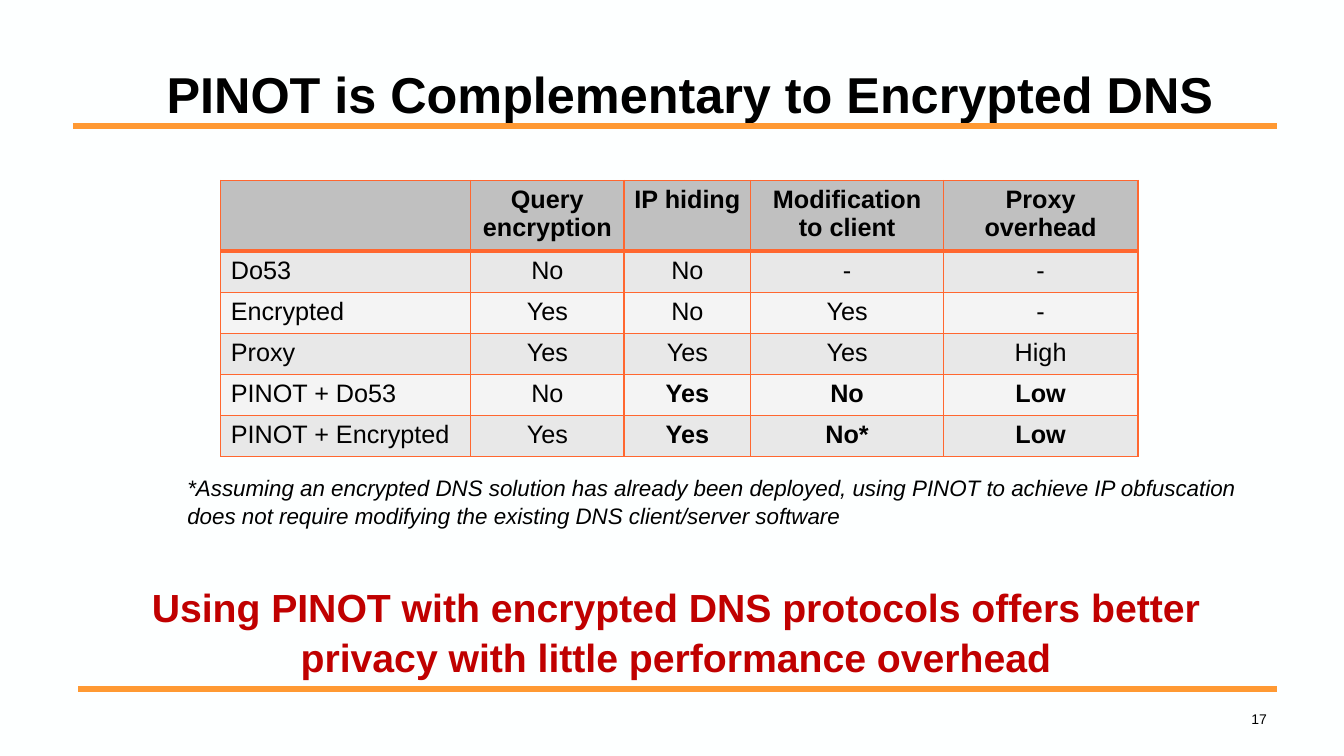
from lxml.etree import SubElement
from pptx import Presentation
from pptx.dml.color import RGBColor
from pptx.enum.shapes import MSO_CONNECTOR as Connector
from pptx.enum.text import MSO_ANCHOR as Anchor, MSO_AUTO_SIZE as AutoSize, PP_ALIGN as Align
from pptx.oxml.ns import qn
from pptx.util import Pt

COLORS = {
    "background": "FDFFFF", "text": "000000", "callout": "C00000",
    "rule": "FF9933", "border": "FF6730", "header": "C0C0C0",
    "odd row": "E8E8E8", "even row": "F4F4F4",
}


def color(name):
    return RGBColor.from_string(COLORS[name])


def write(frame, text, size=18, fill="text", bold=False, italic=False,
          align=Align.LEFT, spacing=1.0):
    frame.word_wrap = True
    paragraph = frame.paragraphs[0]
    paragraph.alignment = align
    paragraph.line_spacing = spacing
    run = paragraph.add_run()
    run.text = text
    run.font.name = "Arial"
    run.font.size = Pt(size)
    run.font.bold = bold
    run.font.italic = italic
    run.font.color.rgb = color(fill)


presentation = Presentation()
presentation.slide_width, presentation.slide_height = Pt(960), Pt(540)
slide = presentation.slides.add_slide(presentation.slide_layouts[5])
slide.background.fill.solid()
slide.background.fill.fore_color.rgb = color("background")

# Rules under the title and above the footer
for left, top in [(52, 90), (56, 492)]:
    rule = slide.shapes.add_connector(Connector.STRAIGHT, Pt(left), Pt(top), Pt(912), Pt(top))
    rule.line.color.rgb = color("rule")
    rule.line.width = Pt(4.5)
    SubElement(rule._element.spPr, qn("a:effectLst"))

# Title
title = slide.shapes.title
title.left, title.top, title.width, title.height = Pt(62.6), Pt(41.8), Pt(861), Pt(94.3)
title.text_frame.auto_size = AutoSize.NONE
title.text_frame.vertical_anchor = Anchor.TOP
write(title.text_frame, "PINOT is Complementary to Encrypted DNS",
      size=36, bold=True, align=Align.CENTER)

# Footnote, callout and slide number
texts = [
    ((126.7, 334, 771, 46),
     "*Assuming an encrypted DNS solution has already been deployed, using PINOT to achieve "
     "IP obfuscation does not require modifying the existing DNS client/server software",
     dict(size=16, italic=True, spacing=1.05)),
    ((53.3, 411.8, 859, 75),
     "Using PINOT with encrypted DNS protocols offers better privacy with little "
     "performance overhead",
     dict(size=28, fill="callout", bold=True, align=Align.CENTER, spacing=1.05)),
    ((712, 504, 200, 24), "17", dict(size=10, align=Align.RIGHT)),
]
for box, text, style in texts:
    shape = slide.shapes.add_textbox(*map(Pt, box))
    write(shape.text_frame, text, **style)

# Comparison table
rows = [
    ["", "Query encryption", "IP hiding", "Modification to client", "Proxy overhead"],
    ["Do53", "No", "No", "-", "-"],
    ["Encrypted", "Yes", "No", "Yes", "-"],
    ["Proxy", "Yes", "Yes", "Yes", "High"],
    ["PINOT + Do53", "No", "Yes", "No", "Low"],
    ["PINOT + Encrypted", "Yes", "Yes", "No*", "Low"],
]
column_widths = [178.6, 109.4, 90.7, 137.5, 139]
row_heights = [50.5] + [29.3] * 5
table = slide.shapes.add_table(
    len(rows), len(column_widths), Pt(157.7), Pt(128.9),
    Pt(sum(column_widths)), Pt(sum(row_heights))).table
for column, width in zip(table.columns, column_widths):
    column.width = Pt(width)
for row, height in zip(table.rows, row_heights):
    row.height = Pt(height)

for row_index, row in enumerate(rows):
    for column_index, text in enumerate(row):
        cell = table.cell(row_index, column_index)
        header = row_index == 0
        pinot_gain = row_index >= 4 and column_index >= 2
        if text:
            write(cell.text_frame, text, bold=header or pinot_gain,
                  align=Align.CENTER if column_index else Align.LEFT)

        # Borders come before the fill in the cell properties
        properties = cell._tc.get_or_add_tcPr()
        for side in ("lnL", "lnR", "lnT", "lnB"):
            below_header = (row_index, side) in [(0, "lnB"), (1, "lnT")]
            border = SubElement(properties, qn(f"a:{side}"), w=str(Pt(3 if below_header else 1)))
            solid = SubElement(border, qn("a:solidFill"))
            SubElement(solid, qn("a:srgbClr"), val=COLORS["border"])
        cell.fill.solid()
        cell.fill.fore_color.rgb = color(
            "header" if header else "odd row" if row_index % 2 else "even row")

presentation.save("out.pptx")
